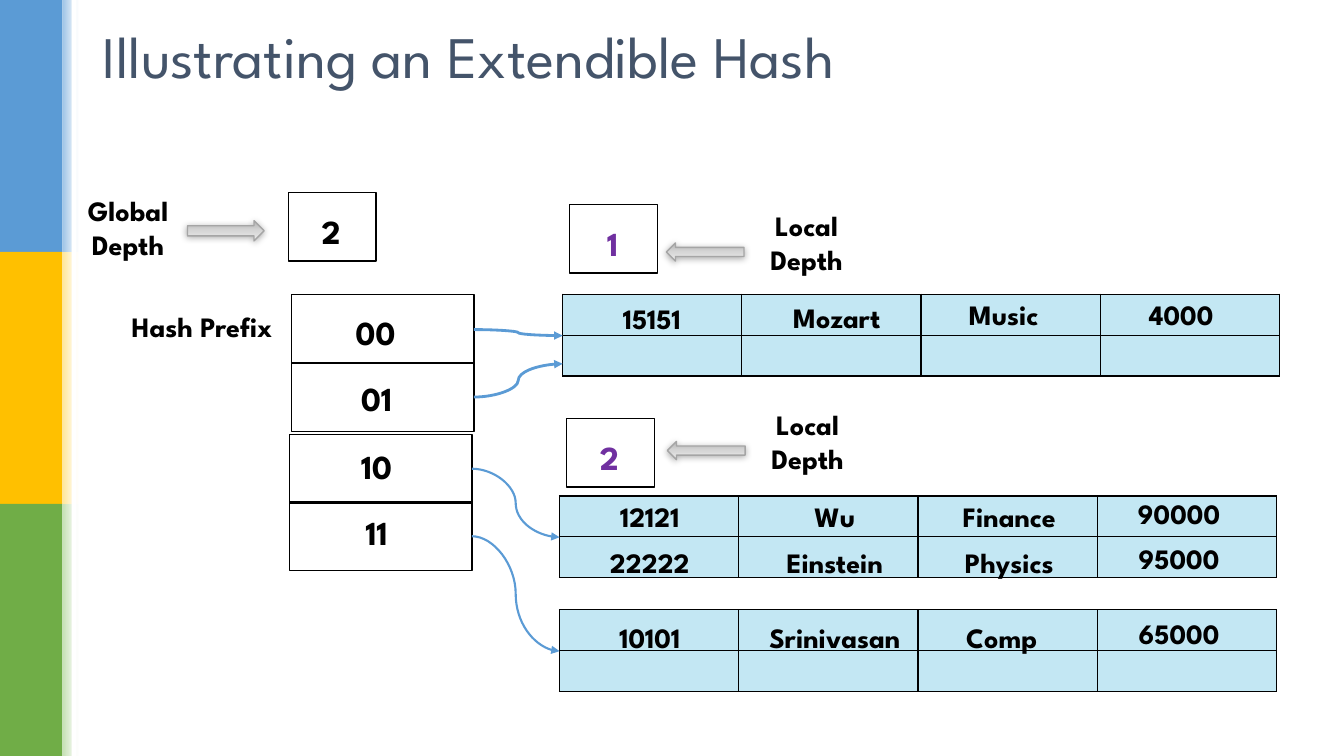
from dataclasses import dataclass

from lxml import etree
from pptx import Presentation
from pptx.dml.color import RGBColor
from pptx.enum import shapes, text
from pptx.oxml import ns, parse_xml
from pptx.util import Inches, Pt


@dataclass(frozen=True)
class Theme:
    font: str = "League Spartan"
    title_size: int = 42
    number_size: int = 24
    label_size: int = 20
    title: str = "44546A"
    ink: str = "000000"
    depth: str = "7030A0"
    cell: str = "C3E7F3"
    link: str = "5B9BD5"
    arrow_line: str = "A5A5A5"
    arrow_stops: tuple = ((0, "B1B1B1"), (48, "D5D5D5"), (100, "EDEDED"))
    bands: tuple = (("5B9BD5", "9DC3E6"), ("FFC000", "FFE699"), ("70AD47", "C5E0B4"))
    white: str = "FFFFFF"


theme = Theme()
deck = Presentation()
deck.slide_width, deck.slide_height = Inches(13.33), Inches(7.5)
page = deck.slides.add_slide(deck.slide_layouts[5])


def add_text(words, left, top, width=1.01, height=0.47, size=theme.label_size,
             color=theme.ink, bold=True, align=text.PP_ALIGN.CENTER, box=None):
    """Write words in a new text box, or in the given placeholder."""
    box = box or page.shapes.add_textbox(0, 0, 0, 0)
    box.left, box.top = Inches(left), Inches(top)
    box.width, box.height = Inches(width), Inches(height)
    frame = box.text_frame
    frame.word_wrap = True
    frame.auto_size = text.MSO_AUTO_SIZE.NONE
    frame.vertical_anchor = text.MSO_ANCHOR.MIDDLE
    para = frame.paragraphs[0]
    para.alignment = align
    span = para.add_run()
    span.text = words
    span.font.name, span.font.size, span.font.bold = theme.font, Pt(size), bold
    span.font.color.rgb = RGBColor.from_string(color)


def add_block(left, top, width, height, fill=None, stops=None, angle=0,
              line=None, preset=shapes.MSO_SHAPE.RECTANGLE):
    """Draw a preset shape with a solid, gradient or empty fill."""
    block = page.shapes.add_shape(preset, Inches(left), Inches(top), Inches(width), Inches(height))
    block.shadow.inherit = False
    if stops:
        block.fill.gradient()
        block.fill.gradient_angle = angle
        stop_list = next(block._element.iter(ns.qn("a:gsLst")))
        for old in list(stop_list):
            stop_list.remove(old)
        for position, color in stops:
            stop = etree.SubElement(stop_list, ns.qn("a:gs"), pos=str(position * 1000))
            etree.SubElement(stop, ns.qn("a:srgbClr"), val=color)
    elif fill:
        block.fill.solid()
        block.fill.fore_color.rgb = RGBColor.from_string(fill)
    else:
        block.fill.background()
    if line:
        block.line.color.rgb = RGBColor.from_string(line)
        block.line.width = Pt(1)
    else:
        block.line.fill.background()
    return block


# Side bands with a fading edge
for index, (strong, pale) in enumerate(theme.bands):
    add_block(0, index * 2.5, 0.62, 2.5, fill=strong)
    add_block(0.62, index * 2.5, 0.16, 2.5, stops=((0, pale), (100, theme.white)))
add_block(0.71, 0, 0.05, 7.5, fill=theme.white)

# Title
add_text("Illustrating an Extendible Hash", 0.92, 0.12, 11.5, 0.86, size=theme.title_size,
         color=theme.title, bold=False, align=text.PP_ALIGN.LEFT, box=page.shapes.title)

# Depth boxes: left, top, value, colour
for left, top, value, color in (
    (2.86, 1.91, "2", theme.ink),
    (5.65, 2.03, "1", theme.depth),
    (5.62, 4.15, "2", theme.depth),
):
    add_block(left, top, 0.87, 0.68, line=theme.ink)
    add_text(value, left - 0.08, top + 0.15, size=theme.number_size, color=color)

# Captions
for words, left, top, width, height in (
    ("Global Depth", 0.69, 1.93, 1.16, 0.65),
    ("Local Depth", 7.42, 2.08, 1.16, 0.65),
    ("Local Depth", 7.43, 4.05, 1.16, 0.65),
    ("Hash Prefix", 1.1, 2.9, 1.81, 0.68),
):
    add_text(words, left, top, width, height)

# Block arrows from the captions to the depth boxes
for preset, left, top, width, height in (
    (shapes.MSO_SHAPE.RIGHT_ARROW, 1.86, 2.19, 0.76, 0.2),
    (shapes.MSO_SHAPE.LEFT_ARROW, 6.61, 2.41, 0.77, 0.18),
    (shapes.MSO_SHAPE.LEFT_ARROW, 6.62, 4.38, 0.77, 0.18),
):
    arrow = add_block(left, top, width, height, stops=theme.arrow_stops, angle=270,
                      line=theme.arrow_line, preset=preset)
    effects = arrow._element.spPr.find(ns.qn("a:effectLst"))
    effects.append(parse_xml(
        f'<a:outerShdw {ns.nsdecls("a")} blurRad="{Pt(5)}" dist="{Pt(1)}" dir="5400000">'
        f'<a:srgbClr val="{theme.ink}"><a:alpha val="32000"/></a:srgbClr></a:outerShdw>'))

# Directory of hash prefixes: prefix, box corner, label corner
for prefix, left, top, label_left, label_top in (
    ("00", 2.89, 2.92, 3.22, 3.06),
    ("01", 2.89, 3.6, 3.23, 3.71),
    ("10", 2.87, 4.31, 3.23, 4.39),
    ("11", 2.87, 4.98, 3.23, 5.04),
):
    add_block(left, top, 1.81, 0.68, line=theme.ink)
    add_text(prefix, label_left, label_top, size=theme.number_size)

# Bucket tables
for left, top in ((5.58, 2.92), (5.55, 4.92), (5.55, 6.05)):
    bucket = page.shapes.add_table(2, 4, Inches(left), Inches(top), Inches(7.11), Inches(0.81)).table
    bucket.first_row = bucket.horz_banding = False
    for cell in bucket.iter_cells():
        cell.margin_top = cell.margin_bottom = 0
        cell.fill.solid()
        cell.fill.fore_color.rgb = RGBColor.from_string(theme.cell)
        for order, side in enumerate("LRTB"):
            cell._tc.tcPr.insert(order, parse_xml(
                f'<a:ln{side} {ns.nsdecls("a")} w="{Pt(1)}"><a:solidFill>'
                f'<a:srgbClr val="{theme.ink}"/></a:solidFill></a:ln{side}>'))

# Records over the bucket rows: bucket left, field tops, fields
field_columns = ((0.39, 1.01), (1.79, 1.88), (3.8, 1.17), (5.56, 1.17))
for left, tops, fields in (
    (5.57, (2.92, 2.91, 2.88, 2.88), ("15151", "Mozart", "Music", "4000")),
    (5.55, (4.89, 4.89, 4.89, 4.86), ("12121", "Wu", "Finance", "90000")),
    (5.55, (5.34, 5.34, 5.34, 5.3), ("22222", "Einstein", "Physics", "95000")),
    (5.55, (6.09, 6.09, 6.09, 6.05), ("10101", "Srinivasan", "Comp", "65000")),
):
    for (offset, width), top, field in zip(field_columns, tops, fields):
        long_field = field in ("Finance", "Physics")
        add_text(field, left + offset, top, 1.32 if long_field else width)

# Curved pointers from prefixes to buckets
for start_x, start_y, end_x, end_y, weight in (
    (4.7, 3.27, 5.58, 3.33, 2),
    (4.7, 3.94, 5.58, 3.61, 2),
    (4.68, 4.65, 5.55, 5.33, 1.5),
    (4.68, 5.32, 5.55, 6.46, 1.5),
):
    pointer = page.shapes.add_connector(shapes.MSO_CONNECTOR.CURVE, Inches(start_x),
                                        Inches(start_y), Inches(end_x), Inches(end_y))
    pointer.line.color.rgb = RGBColor.from_string(theme.link)
    pointer.line.width = Pt(weight)
    etree.SubElement(pointer.line._get_or_add_ln(), ns.qn("a:tailEnd"), type="triangle")
    etree.SubElement(pointer._element.spPr, ns.qn("a:effectLst"))

deck.save("out.pptx")
